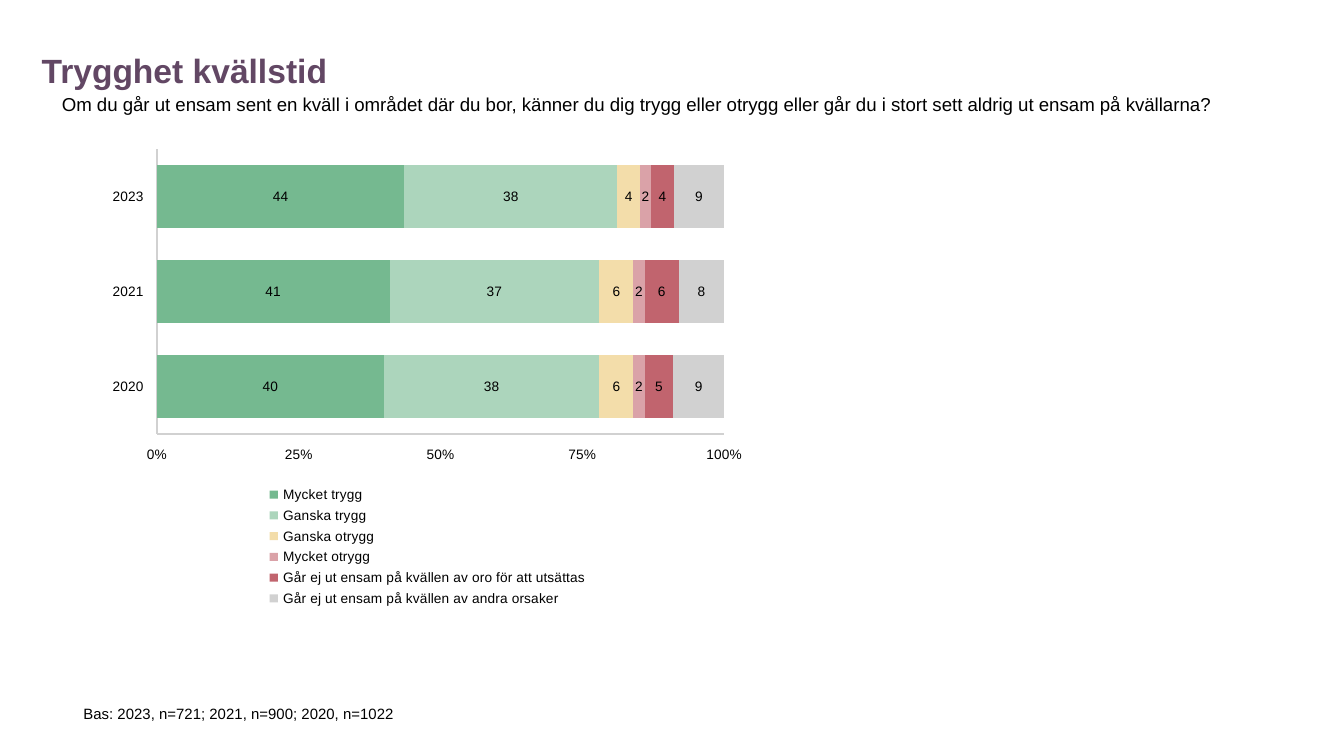
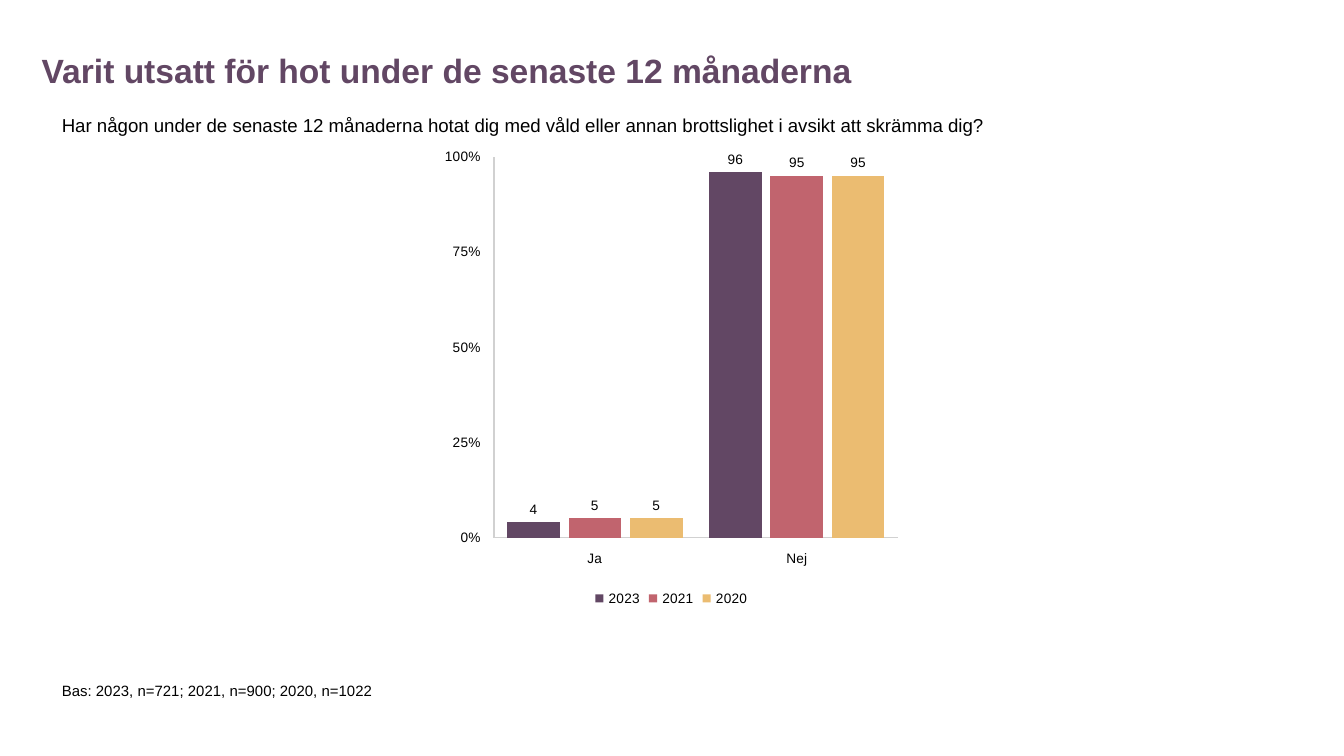
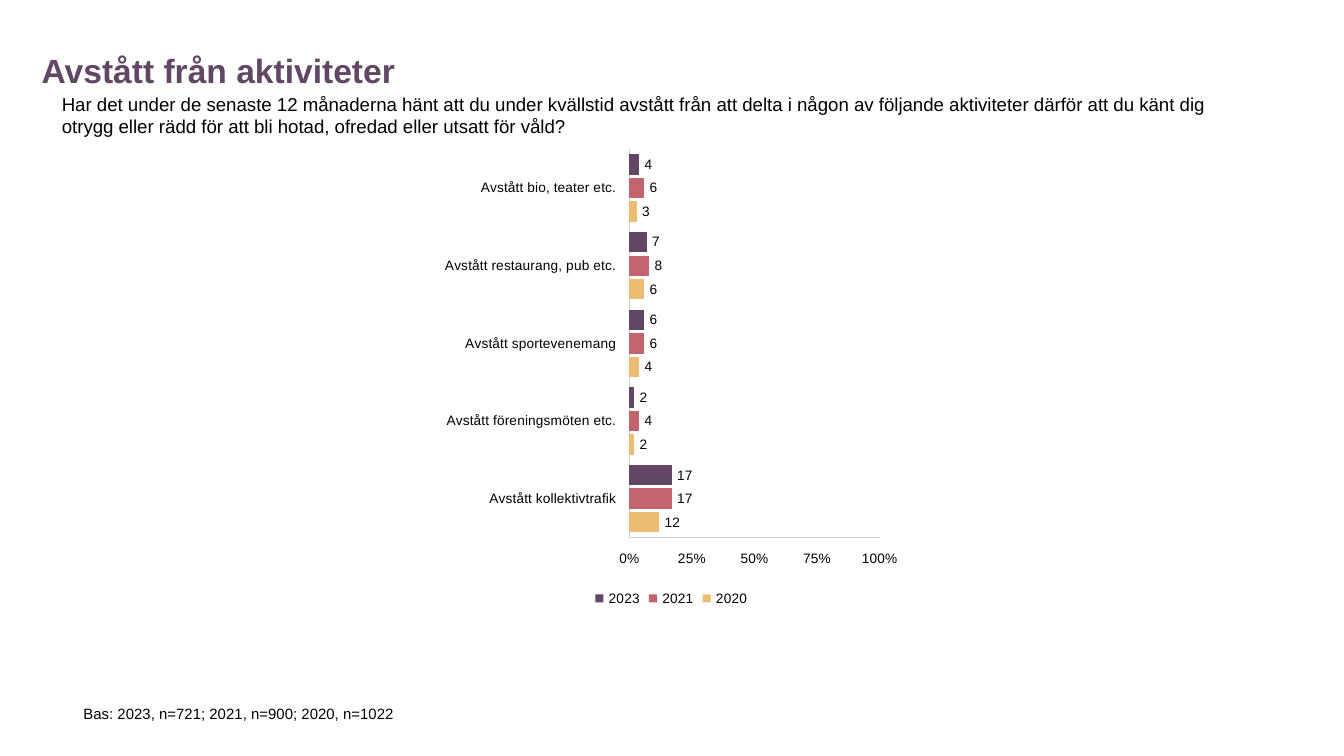
"""Build three survey slides, each with a title, a question, a chart and a base note."""
from pptx import Presentation
from pptx.chart.data import CategoryChartData
from pptx.dml.color import RGBColor
from pptx.enum.chart import (XL_CHART_TYPE, XL_LABEL_POSITION, XL_LEGEND_POSITION,
                             XL_TICK_LABEL_POSITION, XL_TICK_MARK)
from pptx.enum.text import MSO_ANCHOR, MSO_AUTO_SIZE, PP_ALIGN
from pptx.util import Inches, Pt

STACK = XL_CHART_TYPE.BAR_STACKED_100
BARS = XL_CHART_TYPE.BAR_CLUSTERED
COLS = XL_CHART_TYPE.COLUMN_CLUSTERED
MID = XL_LABEL_POSITION.CENTER
END = XL_LABEL_POSITION.OUTSIDE_END
BOTTOM = XL_LEGEND_POSITION.BOTTOM
LOW = XL_TICK_LABEL_POSITION.LOW
NO_TICK = XL_TICK_MARK.NONE
CENTRE, TOP = MSO_ANCHOR.MIDDLE, MSO_ANCHOR.TOP
LEFT = PP_ALIGN.LEFT
NO_FIT = MSO_AUTO_SIZE.NONE

PLUM = RGBColor(0x62, 0x47, 0x64)
ROSE = RGBColor(0xC1, 0x64, 0x6E)
GOLD = RGBColor(0xEB, 0xBC, 0x71)
GREEN = RGBColor(0x75, 0xB9, 0x90)
MINT = RGBColor(0xAC, 0xD5, 0xBC)
CREAM = RGBColor(0xF3, 0xDD, 0xAA)
PINK = RGBColor(0xDA, 0xA2, 0xA8)
GREY = RGBColor(0xD1, 0xD1, 0xD1)
BLACK = RGBColor(0, 0, 0)

FONT = "Arial"
WIDE = 10
HIGH = WIDE * 9 / 16
HEAD = (0, 0, 9.25, 1.04)
FULL = (0.46, 0.69, 8.78, 0.35)
LINE = (0.46, 0.85, 7.29, 0.19)
NOTE = (0.62, 5.24, 7.29, 0.19)
SQUARE = (3.24, 1.04, 3.51, 3.51)
BROAD = (0.74, 1.04, 4.88, 3.51)
BASE = "Bas: 2023, n=721; 2021, n=900; 2020, n=1022"

SLIDES = [
    dict(title="Trygghet kvällstid",
         ask="Om du går ut ensam sent en kväll i området där du bor, känner du dig trygg "
             "eller otrygg eller går du i stort sett aldrig ut ensam på kvällarna?",
         ask_at=FULL, note_at=NOTE, kind=STACK, at=BROAD,
         cats=["2020", "2021", "2023"],
         series=[("Mycket trygg", GREEN, (40, 41, 44)),
                 ("Ganska trygg", MINT, (38, 37, 38)),
                 ("Ganska otrygg", CREAM, (6, 6, 4)),
                 ("Mycket otrygg", PINK, (2, 2, 2)),
                 ("Går ej ut ensam på kvällen av oro för att utsättas", ROSE, (5, 6, 4)),
                 ("Går ej ut ensam på kvällen av andra orsaker", GREY, (9, 8, 9))]),
    dict(title="Varit utsatt för hot under de senaste 12 månaderna",
         ask="Har någon under de senaste 12 månaderna hotat dig med våld eller annan "
             "brottslighet i avsikt att skrämma dig?",
         ask_at=LINE, note_at=(0.46, 5.07, 7.29, 0.19), kind=COLS, at=SQUARE,
         cats=["Ja", "Nej"],
         series=[("2023", PLUM, (4, 96)),
                 ("2021", ROSE, (5, 95)),
                 ("2020", GOLD, (5, 95))]),
    dict(title="Avstått från aktiviteter",
         ask="Har det under de senaste 12 månaderna hänt att du under kvällstid avstått "
             "från att delta i någon av följande aktiviteter därför att du känt dig "
             "otrygg eller rädd för att bli hotad, ofredad eller utsatt för våld?",
         ask_at=FULL, note_at=NOTE, kind=BARS, at=SQUARE,
         cats=["Avstått kollektivtrafik", "Avstått föreningsmöten etc.",
               "Avstått sportevenemang", "Avstått restaurang, pub etc.",
               "Avstått bio, teater etc."],
         series=[("2020", GOLD, (12, 2, 4, 6, 3)),
                 ("2021", ROSE, (17, 4, 6, 8, 6)),
                 ("2023", PLUM, (17, 2, 6, 7, 4))]),
]


def style(font, size, color=BLACK, bold=False):
    """Set the shared face with a size, colour and weight."""
    font.name, font.size, font.bold = FONT, Pt(size), bold
    font.color.rgb = color


def write(slide, text, at, size=10, color=BLACK, bold=False, anchor=TOP, shape=None, inset=0):
    """Write text in a given placeholder or in a new text box."""
    box = [Inches(n) for n in at]
    shape = shape or slide.shapes.add_textbox(*box)
    shape.left, shape.top, shape.width, shape.height = box
    frame = shape.text_frame
    frame.text = text
    frame.word_wrap, frame.auto_size = True, NO_FIT
    frame.vertical_anchor = anchor
    frame.margin_left = Inches(inset)
    frame.margin_top = frame.margin_right = frame.margin_bottom = 0
    para = frame.paragraphs[0]
    para.alignment = LEFT
    style(para.runs[0].font, size, color, bold)


def draw(slide, kind, at, cats, series):
    """Add a percent chart with labelled bars."""
    stacked = kind == STACK
    data = CategoryChartData(number_format="0")
    data.categories = cats
    for name, _, vals in series:
        data.add_series(name, vals)
    chart = slide.shapes.add_chart(kind, *[Inches(n) for n in at], data).chart
    chart.has_title = False
    style(chart.font, 7.3)
    chart.has_legend = True
    chart.legend.position = BOTTOM
    chart.legend.include_in_layout = False
    style(chart.legend.font, 7.3)

    for axis in (chart.category_axis, chart.value_axis):
        axis.has_major_gridlines = False
        axis.major_tick_mark = axis.minor_tick_mark = NO_TICK
        axis.tick_label_position = LOW
        axis.format.line.color.rgb = GREY
        axis.format.line.width = Pt(0.75)
        style(axis.tick_labels.font, 7.3)
    scale = chart.value_axis
    top = 1 if stacked else 100
    scale.minimum_scale, scale.maximum_scale, scale.major_unit = 0, top, top / 4
    scale.tick_labels.number_format = "0%" if stacked else "General\\%"
    scale.tick_labels.number_format_is_linked = False

    plot = chart.plots[0]
    plot.vary_by_categories = False
    plot.gap_width, plot.overlap = 50, 100 if stacked else -16
    plot.has_data_labels = True
    labels = plot.data_labels
    labels.show_value = True
    labels.position = MID if stacked else END
    style(labels.font, 7.3)
    for bar, (_, color, _) in zip(plot.series, series):
        bar.invert_if_negative = False
        bar.format.fill.solid()
        bar.format.fill.fore_color.rgb = color


def main():
    """Build and save the deck."""
    deck = Presentation()
    deck.slide_width, deck.slide_height = Inches(WIDE), Inches(HIGH)
    for page in SLIDES:
        slide = deck.slides.add_slide(deck.slide_layouts[5])
        write(slide, page["title"], HEAD, size=18, color=PLUM, bold=True,
              anchor=CENTRE, shape=slide.shapes.title, inset=0.31)
        draw(slide, page["kind"], page["at"], page["cats"], page["series"])
        write(slide, page["ask"], page["ask_at"])
        write(slide, BASE, page["note_at"], size=8)
    deck.save("out.pptx")


if __name__ == "__main__":
    main()
